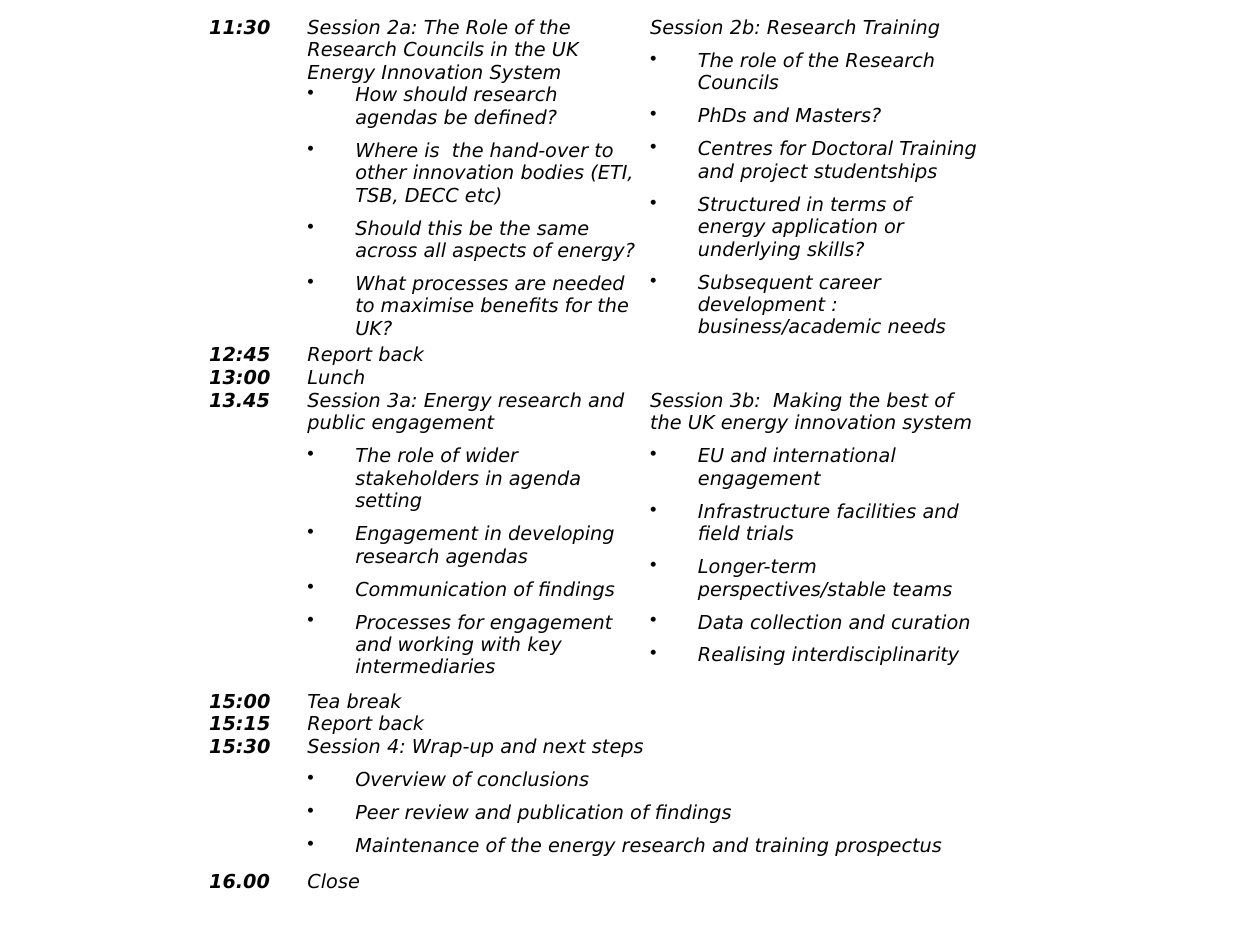
from lxml.etree import SubElement
from pptx import Presentation
from pptx.dml.color import RGBColor
from pptx.oxml.ns import qn
from pptx.util import Inches, Pt

FONT = "DejaVu Sans"
INK = RGBColor(0x04, 0x04, 0x04)
WHITE = RGBColor(0xFF, 0xFF, 0xFF)
INDENT = Inches(0.38)
TABLE_LEFT, TABLE_TOP = 1.61, 0.13
COLUMN_WIDTHS = [0.78, 2.72, 2.72]
LINE_HEIGHT = 0.18

# Each row: height, time, then sessions as (heading, bullets)
AGENDA = [
    (2.6, "11:30", [
        ("Session 2a: The Role of the Research Councils in the UK Energy Innovation System", [
            "How should research agendas be defined?",
            "Where is  the hand-over to other innovation bodies (ETI, TSB, DECC etc)",
            "Should this be the same across all aspects of energy?",
            "What processes are needed to maximise benefits for the UK?"]),
        ("Session 2b: Research Training", [
            "The role of the Research Councils",
            "PhDs and Masters?",
            "Centres for Doctoral Training and project studentships",
            "Structured in terms of energy application or underlying skills?",
            "Subsequent career development : business/academic needs"])]),
    (LINE_HEIGHT, "12:45", [("Report back", [])]),
    (LINE_HEIGHT, "13:00", [("Lunch", [])]),
    (2.39, "13.45", [
        ("Session 3a: Energy research and public engagement", [
            "The role of wider stakeholders in agenda setting",
            "Engagement in developing research agendas",
            "Communication of findings",
            "Processes for engagement and working with key intermediaries"]),
        ("Session 3b:  Making the best of the UK energy innovation system", [
            "EU and international engagement",
            "Infrastructure facilities and field trials",
            "Longer-term perspectives/stable teams",
            "Data collection and curation",
            "Realising interdisciplinarity"])]),
    (LINE_HEIGHT, "15:00", [("Tea break", [])]),
    (LINE_HEIGHT, "15:15", [("Report back", [])]),
    (1.07, "15:30", [
        ("Session 4: Wrap-up and next steps", [
            "Overview of conclusions",
            "Peer review and publication of findings",
            "Maintenance of the energy research and training prospectus"])]),
    (LINE_HEIGHT, "16.00", [("Close", [])]),
]
TIGHT_HEADING = AGENDA[0][2][0][0]


def style_cell(cell, bottom_width):
    cell.margin_left = cell.margin_right = Inches(0.05)
    cell.margin_top = cell.margin_bottom = 0
    properties = cell._tc.get_or_add_tcPr()
    for side, width in (("L", 1), ("R", 1), ("T", 1), ("B", bottom_width)):
        line = SubElement(properties, qn(f"a:ln{side}"), w=str(Pt(width)))
        fill = SubElement(line, qn("a:solidFill"))
        SubElement(fill, qn("a:srgbClr"), val=str(WHITE))
    cell.fill.background()


def write_paragraph(paragraph, text, bold=False, bullet=False):
    if bullet:
        properties = paragraph._p.get_or_add_pPr()
        properties.set("marL", str(INDENT))
        properties.set("indent", str(-INDENT))
        SubElement(properties, qn("a:buChar"), char="•")
    paragraph.space_after = Pt(0 if text == TIGHT_HEADING else 6)
    run = paragraph.add_run()
    run.text = text
    font = run.font
    font.name, font.size = FONT, Pt(11)
    font.bold, font.italic = bold, True
    font.color.rgb = INK


def write_session(cell, heading, bullets):
    frame = cell.text_frame
    write_paragraph(frame.paragraphs[0], heading)
    for text in bullets:
        write_paragraph(frame.add_paragraph(), text, bullet=True)


def main():
    presentation = Presentation()
    presentation.slide_width, presentation.slide_height = Inches(10), Inches(7.5)
    slide = presentation.slides.add_slide(presentation.slide_layouts[6])
    table = slide.shapes.add_table(
        len(AGENDA), len(COLUMN_WIDTHS), Inches(TABLE_LEFT), Inches(TABLE_TOP),
        Inches(sum(COLUMN_WIDTHS)), Inches(sum(row[0] for row in AGENDA))).table
    table.first_row = table.horz_banding = False
    for column, width in zip(table.columns, COLUMN_WIDTHS):
        column.width = Inches(width)

    for index, (height, time, sessions) in enumerate(AGENDA):
        row = table.rows[index]
        row.height = Inches(height)
        for cell in row.cells:
            style_cell(cell, 3 if index == 0 else 1)
        write_paragraph(row.cells[0].text_frame.paragraphs[0], time, bold=True)
        for cell, (heading, bullets) in zip(list(row.cells)[1:], sessions):
            write_session(cell, heading, bullets)
        if len(sessions) == 1:
            row.cells[1].merge(row.cells[2])

    presentation.save("out.pptx")


if __name__ == "__main__":
    main()
